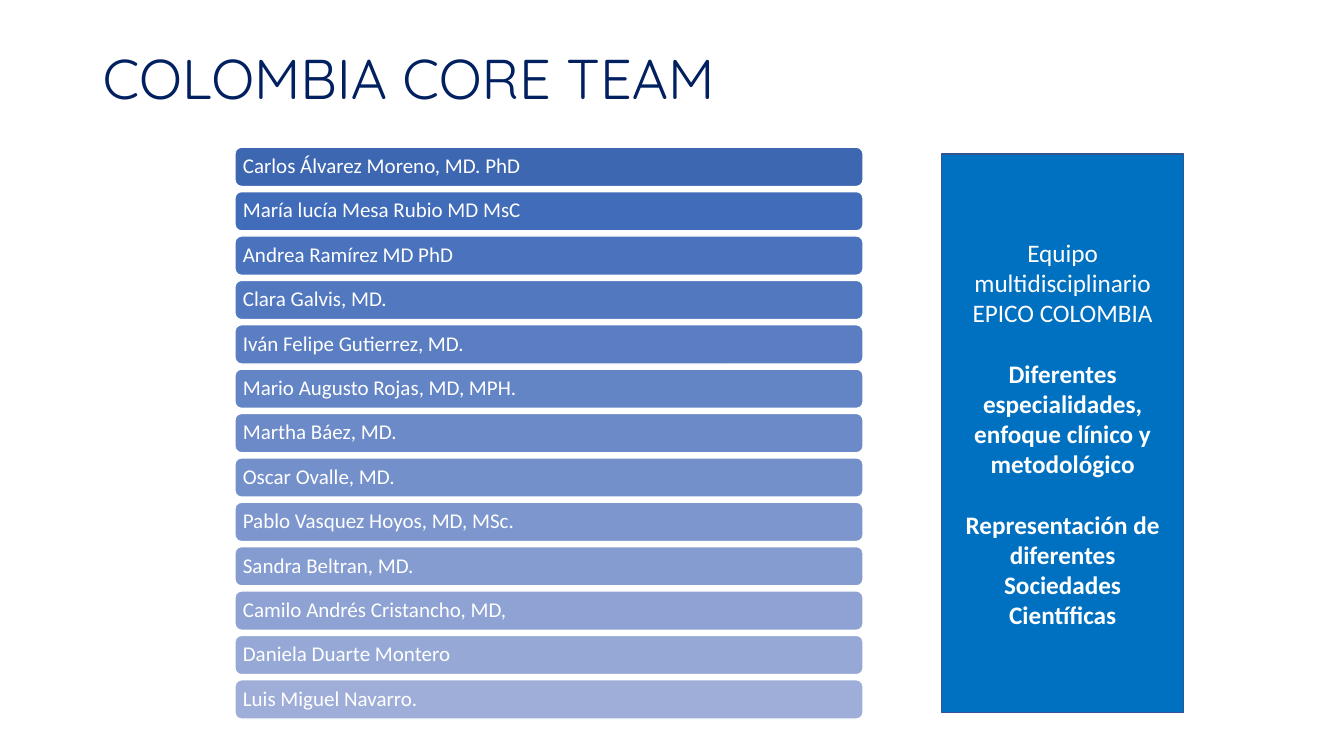
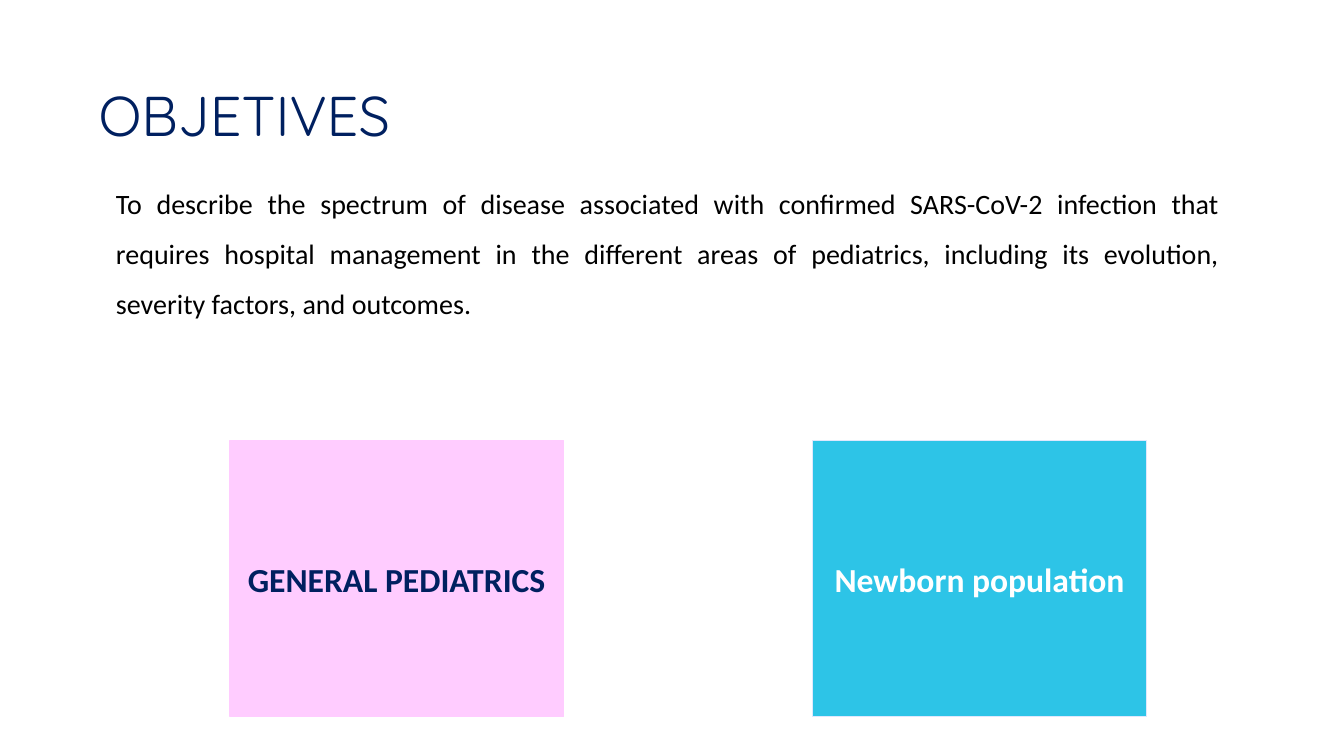
from pptx import Presentation
from pptx.dml.color import RGBColor
from pptx.enum.shapes import MSO_SHAPE
from pptx.enum.text import MSO_ANCHOR, PP_ALIGN
from pptx.util import Inches, Pt

RECT, ROUNDED = MSO_SHAPE.RECTANGLE, MSO_SHAPE.ROUNDED_RECTANGLE
TOP, MIDDLE = MSO_ANCHOR.TOP, MSO_ANCHOR.MIDDLE
LEFT, CENTER, JUSTIFY = PP_ALIGN.LEFT, PP_ALIGN.CENTER, PP_ALIGN.JUSTIFY


class Theme:
    title_font, body_font = "Quicksand", "Calibri"
    title_size, label_size, body_size, panel_size, bar_size = 40, 24, 20, 18, 15
    navy, white, black = "002060", "FFFFFF", "000000"
    panel, panel_line = "0070C0", "325491"
    bar_first, bar_start, bar_end = "3E67B2", "416CBA", "9FAED8"
    pink, cyan, cyan_line = "FFCCFF", "2DC4E7", "DFE8FD"


prs = Presentation()
prs.slide_width, prs.slide_height = Inches(13.33), Inches(7.5)
BLANK = prs.slide_layouts[6]


def add_box(s, area, kind=None, fill=None, line=None, anchor=MIDDLE):
    """Add a shape, or a text box if no kind is given; area is in % of the slide."""
    x, y, w, h = (int(share * side / 100) for share, side in
                  zip(area, (prs.slide_width, prs.slide_height) * 2))
    if kind is None:
        sp = s.shapes.add_textbox(x, y, w, h)
    else:
        sp = s.shapes.add_shape(kind, x, y, w, h)
        sp.shadow.inherit = False
        sp.fill.solid()
        sp.fill.fore_color.rgb = RGBColor.from_string(fill)
        sp.line.color.rgb = RGBColor.from_string(line)
        sp.line.width = Pt(1)
    sp.text_frame.word_wrap = True
    sp.text_frame.vertical_anchor = anchor
    return sp.text_frame


def add_text(tf, text, size, color=Theme.white, font=Theme.body_font,
             bold=False, align=LEFT, spacing=1.0, before=0):
    """Fill the frame's first paragraph, or append one if it is taken."""
    p = tf.add_paragraph() if tf.text else tf.paragraphs[0]
    p.alignment, p.line_spacing, p.space_before = align, spacing, Pt(before)
    r = p.add_run()
    r.text = text
    r.font.name, r.font.size, r.font.bold = font, Pt(size), bold
    r.font.color.rgb = RGBColor.from_string(color)


# Both slides start with a title
TITLES = [
    ("COLOMBIA CORE TEAM", (6.9, 1.07, 86.27, 19.33)),
    ("OBJETIVES", (6.6, 6, 70.52, 19.2)),
]
slides = []
for title, area in TITLES:
    s = prs.slides.add_slide(BLANK)
    add_text(add_box(s, area), title, Theme.title_size, Theme.navy,
             font=Theme.title_font, spacing=0.9)
    slides.append(s)
team, objectives = slides

# Team: one bar per member, fading from dark to light
MEMBERS = [
    "Carlos Álvarez Moreno, MD. PhD",
    "María lucía Mesa Rubio MD MsC",
    "Andrea Ramírez MD PhD",
    "Clara Galvis, MD.",
    "Iván Felipe Gutierrez, MD.",
    "Mario Augusto Rojas, MD, MPH.",
    "Martha Báez, MD.",
    "Oscar Ovalle, MD.",
    "Pablo Vasquez Hoyos, MD, MSc.",
    "Sandra Beltran, MD.",
    "Camilo Andrés Cristancho, MD,",
    "Daniela Duarte Montero",
    "Luis Miguel Navarro.",
]
BAR_TOP, BAR_HEIGHT, BAR_PITCH = 19.47, 5.2, 5.87
start = RGBColor.from_string(Theme.bar_start)
end = RGBColor.from_string(Theme.bar_end)
for i, member in enumerate(MEMBERS):
    share = (i - 1) / (len(MEMBERS) - 2)
    fade = str(RGBColor(*(round(a + (b - a) * share) for a, b in zip(start, end)))) if i else Theme.bar_first
    tf = add_box(team, (17.48, BAR_TOP + i * BAR_PITCH, 46.74, BAR_HEIGHT),
                 ROUNDED, fade, Theme.white)
    tf.margin_left = tf.margin_right = tf.margin_top = tf.margin_bottom = Inches(0.06)
    add_text(tf, member, Theme.bar_size, spacing=0.9)

# Team: side panel
PANEL = [
    ("Equipo multidisciplinario EPICO COLOMBIA", False, 0),
    ("Diferentes especialidades, enfoque clínico y metodológico", True, 21.6),
    ("Representación de diferentes Sociedades Científicas", True, 21.6),
]
tf = add_box(team, (70.07, 20.4, 18, 73.87), RECT, Theme.panel, Theme.panel_line)
for text, bold, before in PANEL:
    add_text(tf, text, Theme.panel_size, bold=bold, align=CENTER, before=before)

# Objectives: statement and the two populations
tf = add_box(objectives, (6.6, 21.73, 84.85, 35.73), anchor=TOP)
tf.margin_left = Inches(0.27)
add_text(tf, "To describe the spectrum of disease associated with confirmed SARS-CoV-2 "
         "infection that requires hospital management in the different areas of "
         "pediatrics, including its evolution, severity factors, and outcomes.",
         Theme.body_size, Theme.black, align=JUSTIFY, spacing=1.5)

POPULATIONS = [
    ("GENERAL PEDIATRICS", 17.1, Theme.pink, Theme.pink, Theme.navy),
    ("Newborn population", 60.47, Theme.cyan, Theme.cyan_line, Theme.white),
]
for label, left, fill, line, color in POPULATIONS:
    tf = add_box(objectives, (left, 58.27, 24.83, 36.53), RECT, fill, line)
    add_text(tf, label, Theme.label_size, color, bold=True, align=CENTER)

prs.save("out.pptx")
